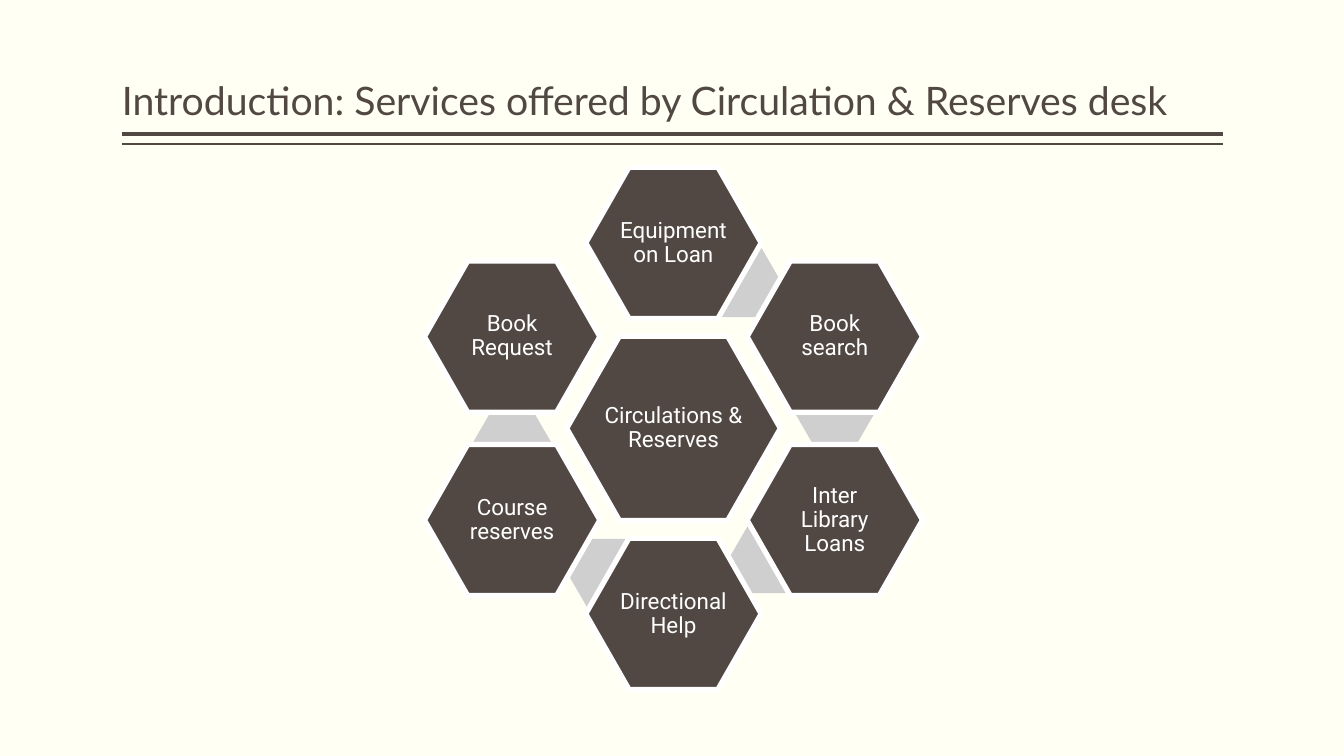
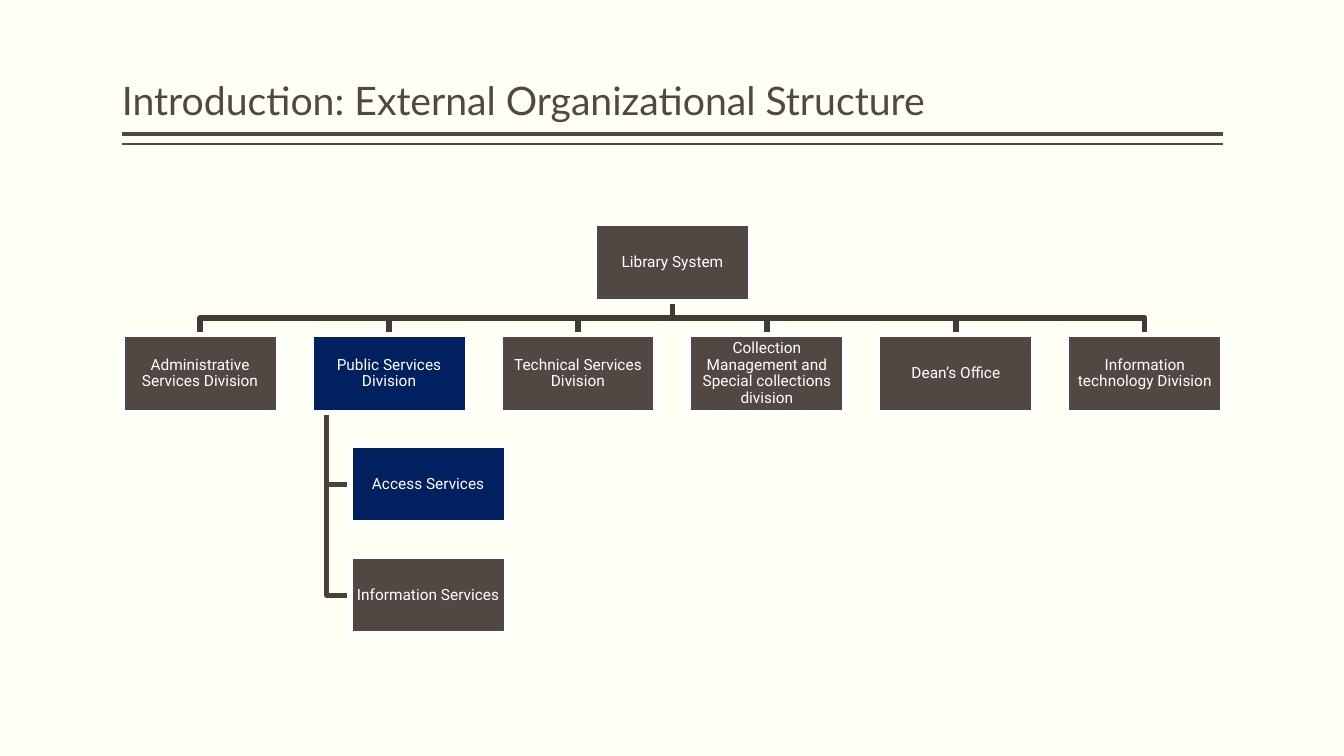
from lxml import etree
from pptx import Presentation
from pptx.dml.color import RGBColor
from pptx.enum.shapes import MSO_CONNECTOR, MSO_SHAPE
from pptx.enum.text import MSO_ANCHOR, MSO_AUTO_SIZE, PP_ALIGN
from pptx.oxml.ns import qn
from pptx.util import Inches, Pt

STRAIGHT = MSO_CONNECTOR.STRAIGHT
HEXAGON, RECTANGLE = MSO_SHAPE.HEXAGON, MSO_SHAPE.RECTANGLE
MIDDLE, BOTTOM = MSO_ANCHOR.MIDDLE, MSO_ANCHOR.BOTTOM
CENTER, LEFT = PP_ALIGN.CENTER, PP_ALIGN.LEFT
NO_AUTOFIT = MSO_AUTO_SIZE.NONE

PAPER, BROWN, WHITE = "FFFFF3", "514843", "FFFFFF"
GREY, NAVY = "D0CFCF", "002060"
BRANCH, TWIG = "413A36", "4A413D"
TITLE_FONT, BODY_FONT = "Lato", "Roboto"
MARGIN_LEFT, MARGIN_RIGHT = 1.21, 12.13
OUTLINE = 3.78

# Service wheel: offsets are measured from the centre of the hub
HUB_X, HUB_Y = 6.68, 4.25
SIDE_X, SIDE_Y, POLE_Y = 1.6, 0.91, 1.84
SERVICES = [
    ("Equipment on Loan", 0, -POLE_Y),
    ("Book search", SIDE_X, -SIDE_Y),
    ("Inter Library Loans", SIDE_X, SIDE_Y),
    ("Directional Help", 0, POLE_Y),
    ("Course reserves", -SIDE_X, SIDE_Y),
    ("Book Request", -SIDE_X, -SIDE_Y),
]
BRIDGES = [(0.67, -1.45), (1.6, -0.16), (0.95, 1.29), (-0.65, 1.44), (-1.6, 0.16)]

# Organization chart
BOX_WIDTH, BOX_HEIGHT = 1.55, 0.77
LEVEL_TOP, LEVEL_STEP = 2.22, 1.1
DIVISIONS = [
    "Administrative Services Division",
    "Public Services Division",
    "Technical Services Division",
    "Collection Management and Special collections division",
    "Dean’s Office",
    "Information technology Division",
]
PARENT_DIVISION = 1
UNITS = ["Access Services", "Information Services"]
HIGHLIGHTED = {"Public Services Division", "Access Services"}


def rgb(value):
    return RGBColor.from_string(value)


def set_line(shape, color, width):
    shape.line.color.rgb = rgb(color)
    shape.line.width = Pt(width)


def write(frame, text, font, size, color, align, anchor, insets):
    """Fill a text frame; insets are (horizontal, vertical) inches."""
    frame.text = text
    frame.word_wrap = True
    frame.auto_size = NO_AUTOFIT
    frame.vertical_anchor = anchor
    frame.margin_left = frame.margin_right = Inches(insets[0])
    frame.margin_top = frame.margin_bottom = Inches(insets[1])
    para = frame.paragraphs[0]
    para.alignment = align
    para.line_spacing = 0.9
    for span in para.runs:
        span.font.name = font
        span.font.size = Pt(size)
        span.font.color.rgb = rgb(color)


def add_rule(page, y, width):
    rule = page.shapes.add_connector(
        STRAIGHT, Inches(MARGIN_LEFT), Inches(y), Inches(MARGIN_RIGHT), Inches(y))
    set_line(rule, BROWN, width)
    etree.SubElement(rule._element.spPr, qn("a:effectLst"))


def add_page(deck, heading):
    """Add a slide with the shared title and double rule."""
    page = deck.slides.add_slide(deck.slide_layouts[5])
    add_rule(page, 1.33, 3)
    add_rule(page, 1.43, 1)
    title = page.shapes.title
    title.left, title.top = Inches(MARGIN_LEFT), Inches(0.08)
    title.width, title.height = Inches(MARGIN_RIGHT - MARGIN_LEFT), Inches(1.2)
    write(title.text_frame, heading, TITLE_FONT, 28, BROWN, LEFT, BOTTOM, (0, 0.05))
    return page


def add_block(page, kind, left, top, width, height, fill):
    block = page.shapes.add_shape(
        kind, Inches(left), Inches(top), Inches(width), Inches(height))
    block.shadow.inherit = False
    block.fill.solid()
    block.fill.fore_color.rgb = rgb(fill)
    block.line.fill.background()
    return block


def add_label(block, text, size, inset):
    """Give a block its white outline and centred white text."""
    set_line(block, WHITE, OUTLINE)
    write(block.text_frame, text, BODY_FONT, size, WHITE, CENTER, MIDDLE, (inset, inset))


def add_hexagon(page, dx, dy, width, height, fill, adjust):
    """Add a hexagon centred at an offset from the hub."""
    hexagon = add_block(page, HEXAGON, HUB_X + dx - width / 2,
                        HUB_Y + dy - height / 2, width, height, fill)
    hexagon.adjustments[0] = adjust
    return hexagon


def add_service(page, text, dx, dy, width, height):
    hexagon = add_hexagon(page, dx, dy, width, height, BROWN, 0.286)
    add_label(hexagon, text, 16, 0.02)


def add_org_box(page, text, left, top):
    fill = NAVY if text in HIGHLIGHTED else BROWN
    box = add_block(page, RECTANGLE, left, top, BOX_WIDTH, BOX_HEIGHT, fill)
    add_label(box, text, 11, 0.01)


def add_path(page, points, color):
    """Draw an open angled line through points given in inches."""
    corners = [(Inches(x), Inches(y)) for x, y in points]
    builder = page.shapes.build_freeform(*corners[0])
    builder.add_line_segments(corners[1:], close=False)
    path = builder.convert_to_shape()
    path.shadow.inherit = False
    path.fill.background()
    set_line(path, color, OUTLINE)


def build_services(deck):
    page = add_page(deck, "Introduction: Services offered by Circulation & Reserves desk")
    add_service(page, "Circulations & Reserves", 0, 0, 2.12, 1.83)
    for dx, dy in BRIDGES:
        add_hexagon(page, dx, dy, 0.8, 0.69, GREY, 0.289)
    for text, dx, dy in SERVICES:
        add_service(page, text, dx, dy, 1.74, 1.5)


def build_structure(deck):
    page = add_page(deck, "Introduction: External Organizational Structure")
    root_top, division_top, *unit_tops = [
        LEVEL_TOP + LEVEL_STEP * level for level in range(2 + len(UNITS))]
    step = (MARGIN_RIGHT - MARGIN_LEFT - BOX_WIDTH) / (len(DIVISIONS) - 1)
    lefts = [MARGIN_LEFT + step * index for index in range(len(DIVISIONS))]
    root_x = (MARGIN_LEFT + MARGIN_RIGHT) / 2
    root_bottom = root_top + BOX_HEIGHT
    bar_y = (root_bottom + division_top) / 2
    spine_x = lefts[PARENT_DIVISION] + BOX_WIDTH / 10
    unit_left = lefts[PARENT_DIVISION] + BOX_WIDTH / 4

    for left in lefts:
        x = left + BOX_WIDTH / 2
        add_path(page, [(root_x, root_bottom), (root_x, bar_y),
                        (x, bar_y), (x, division_top)], BRANCH)
    for top in unit_tops:
        y = top + BOX_HEIGHT / 2
        add_path(page, [(spine_x, division_top + BOX_HEIGHT),
                        (spine_x, y), (unit_left, y)], TWIG)

    add_org_box(page, "Library System", root_x - BOX_WIDTH / 2, root_top)
    for text, left in zip(DIVISIONS, lefts):
        add_org_box(page, text, left, division_top)
    for text, top in zip(UNITS, unit_tops):
        add_org_box(page, text, unit_left, top)


def main():
    deck = Presentation()
    deck.slide_width, deck.slide_height = Inches(13.33), Inches(7.5)
    backdrop = deck.slide_master.background.fill
    backdrop.solid()
    backdrop.fore_color.rgb = rgb(PAPER)
    build_services(deck)
    build_structure(deck)
    deck.save("out.pptx")


if __name__ == "__main__":
    main()
